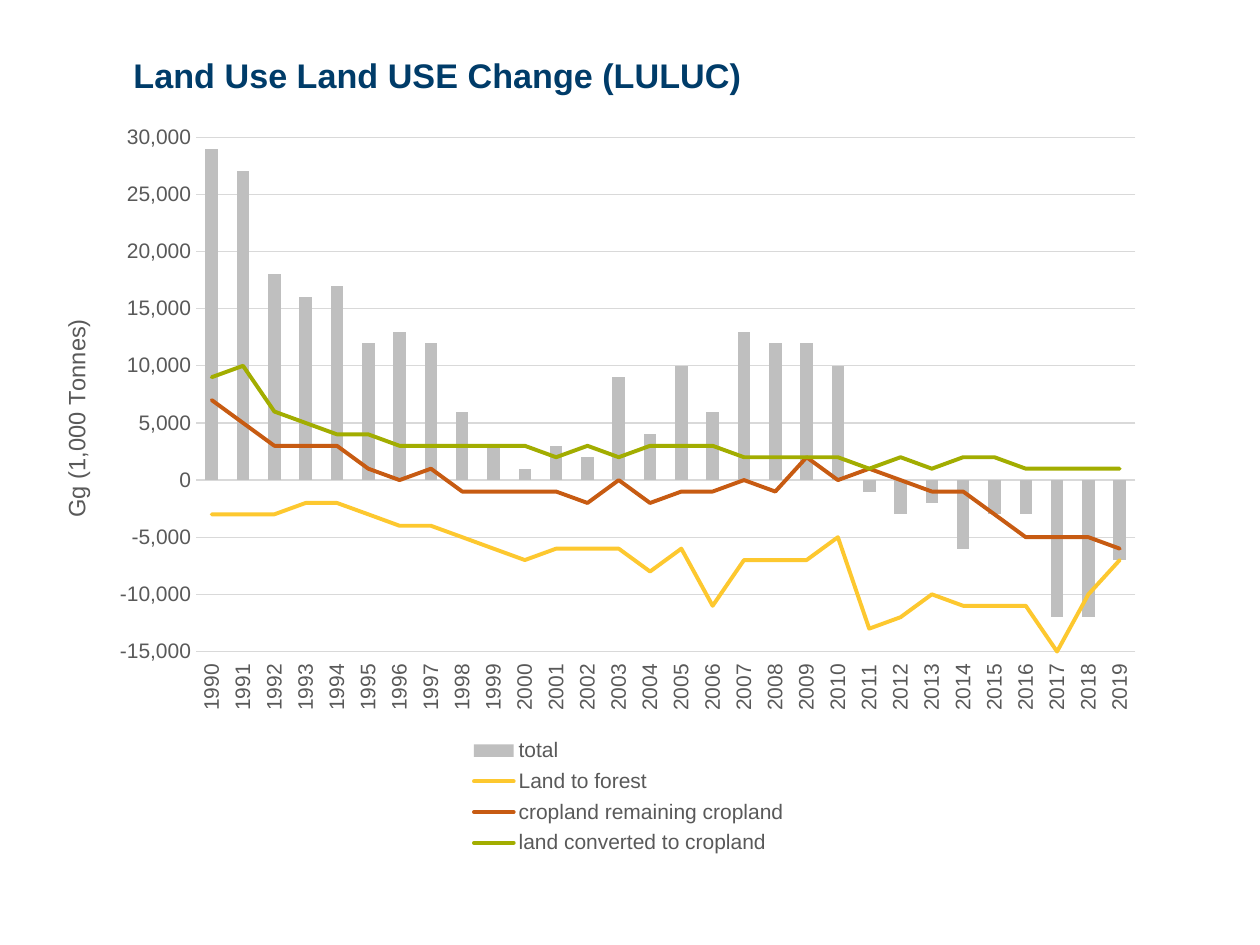
from dataclasses import dataclass

from lxml.etree import SubElement
from pptx import Presentation
from pptx.chart.data import CategoryChartData
from pptx.dml.color import RGBColor
from pptx.enum.chart import XL_CHART_TYPE as ChartType
from pptx.enum.chart import XL_LEGEND_POSITION as LegendPosition
from pptx.enum.chart import XL_MARKER_STYLE as MarkerStyle
from pptx.enum.chart import XL_TICK_LABEL_POSITION as LabelPosition
from pptx.enum.chart import XL_TICK_MARK as TickMark
from pptx.enum.text import MSO_ANCHOR as Anchor
from pptx.oxml import parse_xml
from pptx.oxml.ns import nsdecls, qn
from pptx.util import Inches, Pt


@dataclass(frozen=True)
class Theme:
    font: str = "Arial"
    heading: str = "003C69"
    text: str = "595959"
    grid: str = "D9D9D9"
    total: str = "BFBFBF"
    forest: str = "FDC82F"
    remaining: str = "C75B12"
    converted: str = "A2AD00"
    heading_size: float = 19.5
    axis_title_size: float = 13.5
    label_size: float = 12
    grid_width: float = 0.75
    line_width: float = 2.25


THEME = Theme()
YEARS = [str(year) for year in range(1990, 2020)]

# Name, colour and yearly values in thousand Gg; the first series is drawn as columns
SERIES = [
    ("total", THEME.total, [
        29, 27, 18, 16, 17, 12, 13, 12, 6, 3, 1, 3, 2, 9, 4,
        10, 6, 13, 12, 12, 10, -1, -3, -2, -6, -3, -3, -12, -12, -7]),
    ("Land to forest", THEME.forest, [
        -3, -3, -3, -2, -2, -3, -4, -4, -5, -6, -7, -6, -6, -6, -8,
        -6, -11, -7, -7, -7, -5, -13, -12, -10, -11, -11, -11, -15, -10, -7]),
    ("cropland remaining cropland", THEME.remaining, [
        7, 5, 3, 3, 3, 1, 0, 1, -1, -1, -1, -1, -2, 0, -2,
        -1, -1, 0, -1, 2, 0, 1, 0, -1, -1, -3, -5, -5, -5, -6]),
    ("land converted to cropland", THEME.converted, [
        9, 10, 6, 5, 4, 4, 3, 3, 3, 3, 3, 2, 3, 2, 3,
        3, 3, 2, 2, 2, 2, 1, 2, 1, 2, 2, 1, 1, 1, 1]),
]


def style_font(font, size, color, bold=False):
    font.name = THEME.font
    font.size = Pt(size)
    font.bold = bold
    font.color.rgb = RGBColor.from_string(color)


def style_line(line, color, width):
    line.color.rgb = RGBColor.from_string(color)
    line.width = Pt(width)


def set_layout(element, index, **settings):
    """Give a chart part a manual layout, as fractions of the chart."""
    for old in element.findall(qn("c:layout")):
        element.remove(old)
    layout = parse_xml(f"<c:layout {nsdecls('c')}><c:manualLayout/></c:layout>")
    for name, value in settings.items():
        SubElement(layout[0], qn(f"c:{name}")).set("val", str(value))
    element.insert(index, layout)


def move_to_lines(chart):
    """Move every series but the first from the columns to a line plot."""
    columns = chart.plots[0]._element
    lines = parse_xml(
        f"<c:lineChart {nsdecls('c')}><c:grouping val='standard'/>"
        "<c:varyColors val='0'/><c:marker val='1'/></c:lineChart>")
    marker = lines.find(qn("c:marker"))
    for series in columns.findall(qn("c:ser"))[1:]:
        for invert in series.findall(qn("c:invertIfNegative")):
            series.remove(invert)
        marker.addprevious(series)
    for axis in columns.findall(qn("c:axId")):
        SubElement(lines, qn("c:axId")).set("val", axis.get("val"))
    columns.addnext(lines)


def style_series(chart):
    columns, lines = chart.plots
    columns.gap_width = 150
    columns.vary_by_categories = False
    fill = columns.series[0].format.fill
    fill.solid()
    fill.fore_color.rgb = RGBColor.from_string(THEME.total)
    for series, (_, color, _) in zip(lines.series, SERIES[1:]):
        style_line(series.format.line, color, THEME.line_width)
        series.format.line._ln.set("cap", "rnd")
        series.marker.style = MarkerStyle.NONE
        series.smooth = False


def style_axes(chart):
    years, values = chart.category_axis, chart.value_axis
    for axis in (years, values):
        axis.major_tick_mark = axis.minor_tick_mark = TickMark.NONE
        style_font(axis.tick_labels.font, THEME.label_size, THEME.text)

    # Years stand upright below the plot
    years.tick_label_position = LabelPosition.LOW
    years.has_major_gridlines = False
    style_line(years.format.line, THEME.grid, THEME.grid_width)
    body = years._element.find(qn("c:txPr")).find(qn("a:bodyPr"))
    body.set("rot", "-5400000")
    body.set("vert", "horz")

    values.minimum_scale, values.maximum_scale = -15000, 30000
    values.major_unit = 5000
    values.tick_labels.number_format = "#,##0"
    values.tick_labels.number_format_is_linked = False
    values.format.line.fill.background()
    values.has_major_gridlines = True
    style_line(values.major_gridlines.format.line, THEME.grid, THEME.grid_width)

    # Value axis title
    title = values.axis_title
    run = title.text_frame.paragraphs[0].add_run()
    run.text = "Gg (1,000 Tonnes)"
    style_font(run.font, THEME.axis_title_size, THEME.text)
    title_body = title.text_frame._txBody.find(qn("a:bodyPr"))
    title_body.set("rot", "-5400000")
    title_body.set("vert", "horz")
    set_layout(title._element, 1, xMode="edge", yMode="edge", x=0.004, y=0.256)


def style_legend(chart):
    chart.has_legend = True
    legend = chart.legend
    legend.position = LegendPosition.BOTTOM
    legend.include_in_layout = False
    style_font(legend.font, THEME.label_size, THEME.text)
    set_layout(legend._element, 1, xMode="edge", yMode="edge",
               x=0.378, y=0.795, w=0.29, h=0.17)


def add_land_use_chart(slide):
    data = CategoryChartData(number_format="#,##0")
    data.categories = YEARS
    for name, _, thousands in SERIES:
        data.add_series(name, [value * 1000 for value in thousands])
    chart = slide.shapes.add_chart(
        ChartType.COLUMN_CLUSTERED, Inches(0.42), Inches(0.93),
        Inches(8.74), Inches(6.13), data).chart
    chart.has_title = False
    chart.font.name = THEME.font
    chart.font.size = Pt(10)
    move_to_lines(chart)
    style_series(chart)
    style_axes(chart)
    style_legend(chart)
    plot_area = chart._chartSpace.find(qn("c:chart")).find(qn("c:plotArea"))
    set_layout(plot_area, 0, layoutTarget="inner", xMode="edge", yMode="edge",
               x=0.13, y=0.026, w=0.853, h=0.666)


def add_heading(slide, text):
    box = slide.shapes.add_textbox(Inches(1.06), Inches(0.36), Inches(5.2), Inches(0.47))
    frame = box.text_frame
    frame.word_wrap = True
    frame.vertical_anchor = Anchor.MIDDLE
    frame.margin_left = frame.margin_right = 0
    run = frame.paragraphs[0].add_run()
    run.text = text
    style_font(run.font, THEME.heading_size, THEME.heading, bold=True)


def main():
    presentation = Presentation()
    presentation.slide_width, presentation.slide_height = Inches(10), Inches(7.5)
    slide = presentation.slides.add_slide(presentation.slide_layouts[6])
    add_land_use_chart(slide)
    add_heading(slide, "Land Use Land USE Change (LULUC)")
    presentation.save("out.pptx")


if __name__ == "__main__":
    main()
